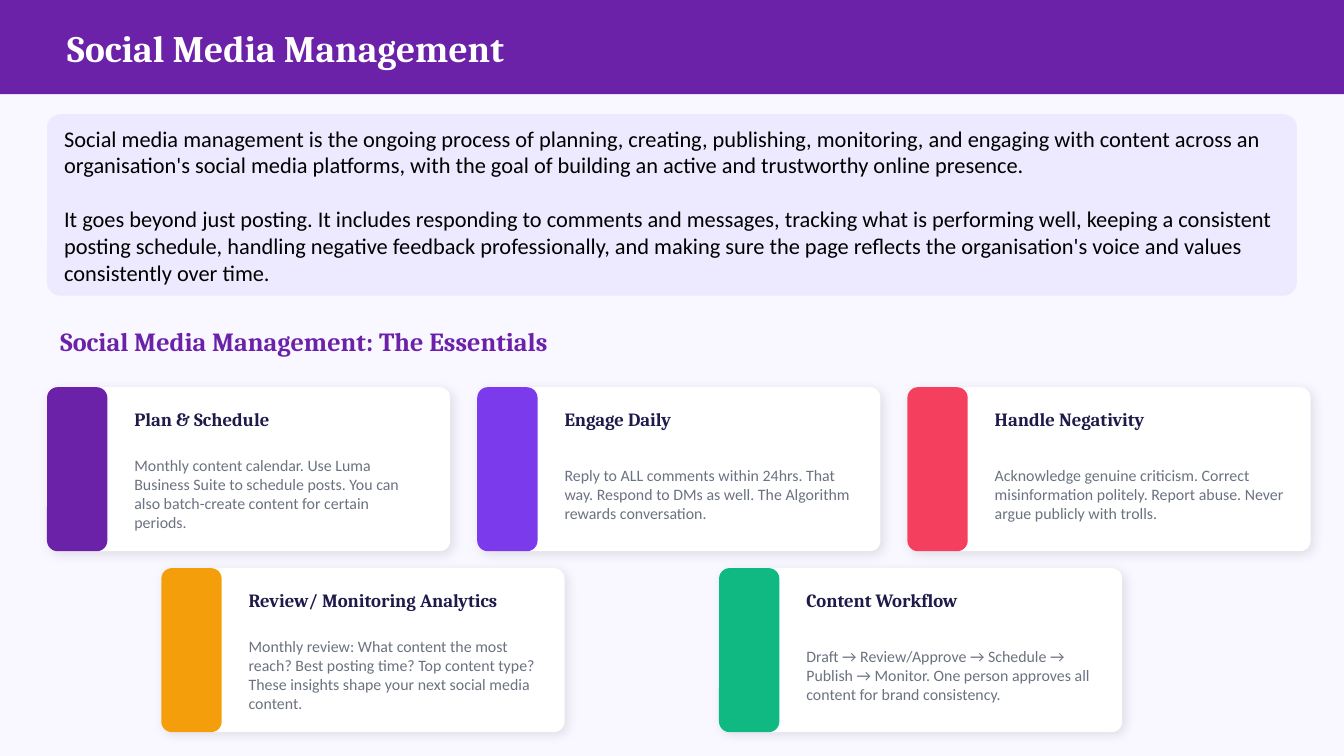
from lxml.etree import SubElement
from pptx import Presentation
from pptx.dml.color import RGBColor
from pptx.enum.shapes import MSO_SHAPE as Preset
from pptx.enum.text import MSO_ANCHOR as Anchor
from pptx.oxml.ns import qn
from pptx.util import Cm, Pt

COLORS = {
    "page": "F9F7FF", "purple": "6B21A8", "lilac": "EDE9FE", "white": "FFFFFF",
    "violet": "7C3AED", "rose": "F43F5E", "amber": "F59E0B", "green": "10B981",
    "black": "000000", "navy": "1E1B4B", "gray": "6B7280",
}
FORMATS = {
    "title": ({"name": "Cambria", "size": Pt(20), "bold": True}, "white"),
    "intro": ({"name": "Calibri", "size": Pt(12)}, "black"),
    "section": ({"name": "Cambria", "size": Pt(14), "bold": True}, "purple"),
    "heading": ({"name": "Cambria", "size": Pt(10), "bold": True}, "navy"),
    "detail": ({"name": "Calibri", "size": Pt(8.5)}, "gray"),
}

MARGIN, CONTENT_WIDTH = 0.89, 23.62
BAND_HEIGHT = 1.78
CARD_WIDTH, CARD_HEIGHT, STRIPE_WIDTH = 7.62, 3.1, 1.14
CARD_RADIUS, INTRO_RADIUS = 0.2, 0.25

INTRO = [
    "Social media management is the ongoing process of planning, creating, "
    "publishing, monitoring, and engaging with content across an organisation's "
    "social media platforms, with the goal of building an active and trustworthy "
    "online presence.",
    "It goes beyond just posting. It includes responding to comments and messages, "
    "tracking what is performing well, keeping a consistent posting schedule, "
    "handling negative feedback professionally, and making sure the page reflects "
    "the organisation's voice and values consistently over time.",
]
# Each row: left, top, pitch, cards (colour, heading, detail)
CARD_ROWS = [
    (MARGIN, 7.32, 8.13, [
        ("purple", "Plan & Schedule",
         "Monthly content calendar. Use Luma Business Suite to schedule posts. "
         "You can also batch-create content for certain periods."),
        ("violet", "Engage Daily",
         "Reply to ALL comments within 24hrs. That way. Respond to DMs as well. "
         "The Algorithm rewards conversation."),
        ("rose", "Handle Negativity",
         "Acknowledge genuine criticism. Correct misinformation politely. "
         "Report abuse. Never argue publicly with trolls."),
    ]),
    (3.05, 10.74, 10.54, [
        ("amber", "Review/ Monitoring Analytics",
         "Monthly review: What content the most reach? Best posting time? Top "
         "content type? These insights shape your next social media content."),
        ("green", "Content Workflow",
         "Draft → Review/Approve → Schedule → Publish → Monitor. One person "
         "approves all content for brand consistency."),
    ]),
]


def rgb(color):
    return RGBColor.from_string(COLORS[color])


def add_panel(page, left, top, width, height, color, radius=0):
    preset = Preset.ROUNDED_RECTANGLE if radius else Preset.RECTANGLE
    panel = page.shapes.add_shape(preset, Cm(left), Cm(top), Cm(width), Cm(height))
    if radius:
        panel.adjustments[0] = radius / min(width, height)
    panel.fill.solid()
    panel.fill.fore_color.rgb = rgb(color)
    panel.line.fill.background()
    panel.shadow.inherit = False
    return panel


def add_soft_shadow(panel):
    effects = panel._element.spPr.find(qn("a:effectLst"))
    shadow = SubElement(effects, qn("a:outerShdw"), blurRad=str(Pt(6)),
                        dist=str(Pt(2)), dir="2700000", algn="bl", rotWithShape="0")
    tint = SubElement(shadow, qn("a:srgbClr"), val=COLORS["black"])
    SubElement(tint, qn("a:alpha"), val="10000")


def write_text(box, texts, style, anchor=Anchor.MIDDLE, gap=0):
    """Fill a box with paragraphs, with a gap in points between them."""
    frame = box.text_frame
    frame.word_wrap = True
    frame.vertical_anchor = anchor
    values, color = FORMATS[style]
    for index, text in enumerate(texts):
        para = frame.add_paragraph() if index else frame.paragraphs[0]
        para.alignment = 1
        if index:
            para.space_before = Pt(gap)
        span = para.add_run()
        span.text = text
        for name, value in values.items():
            setattr(span.font, name, value)
        span.font.color.rgb = rgb(color)


def add_label(page, left, top, width, height, text, style):
    box = page.shapes.add_textbox(Cm(left), Cm(top), Cm(width), Cm(height))
    write_text(box, [text], style)


def add_card(page, left, top, color, heading, detail):
    card = add_panel(page, left, top, CARD_WIDTH, CARD_HEIGHT, "white", CARD_RADIUS)
    add_soft_shadow(card)
    add_panel(page, left, top, STRIPE_WIDTH, CARD_HEIGHT, color, CARD_RADIUS)
    add_label(page, left + 1.4, top + 0.2, 5.97, 0.81, heading, "heading")
    add_label(page, left + 1.4, top + 1.07, 5.97, 1.9, detail, "detail")


def main():
    deck = Presentation()
    deck.slide_width, deck.slide_height = Cm(25.4), Cm(14.29)
    page = deck.slides.add_slide(deck.slide_layouts[6])
    page.background.fill.solid()
    page.background.fill.fore_color.rgb = rgb("page")

    add_panel(page, 0, 0, 25.4, BAND_HEIGHT, "purple")
    add_label(page, 1.02, 0, 23.37, BAND_HEIGHT, "Social Media Management", "title")
    intro = add_panel(page, MARGIN, 2.16, CONTENT_WIDTH, 3.43, "lilac", INTRO_RADIUS)
    write_text(intro, INTRO, "intro", Anchor.TOP, gap=14.4)
    add_label(page, MARGIN, 5.97, CONTENT_WIDTH, 0.97,
              "Social Media Management: The Essentials", "section")

    for left, top, pitch, cards in CARD_ROWS:
        for column, card in enumerate(cards):
            add_card(page, left + column * pitch, top, *card)

    deck.save("out.pptx")


if __name__ == "__main__":
    main()
